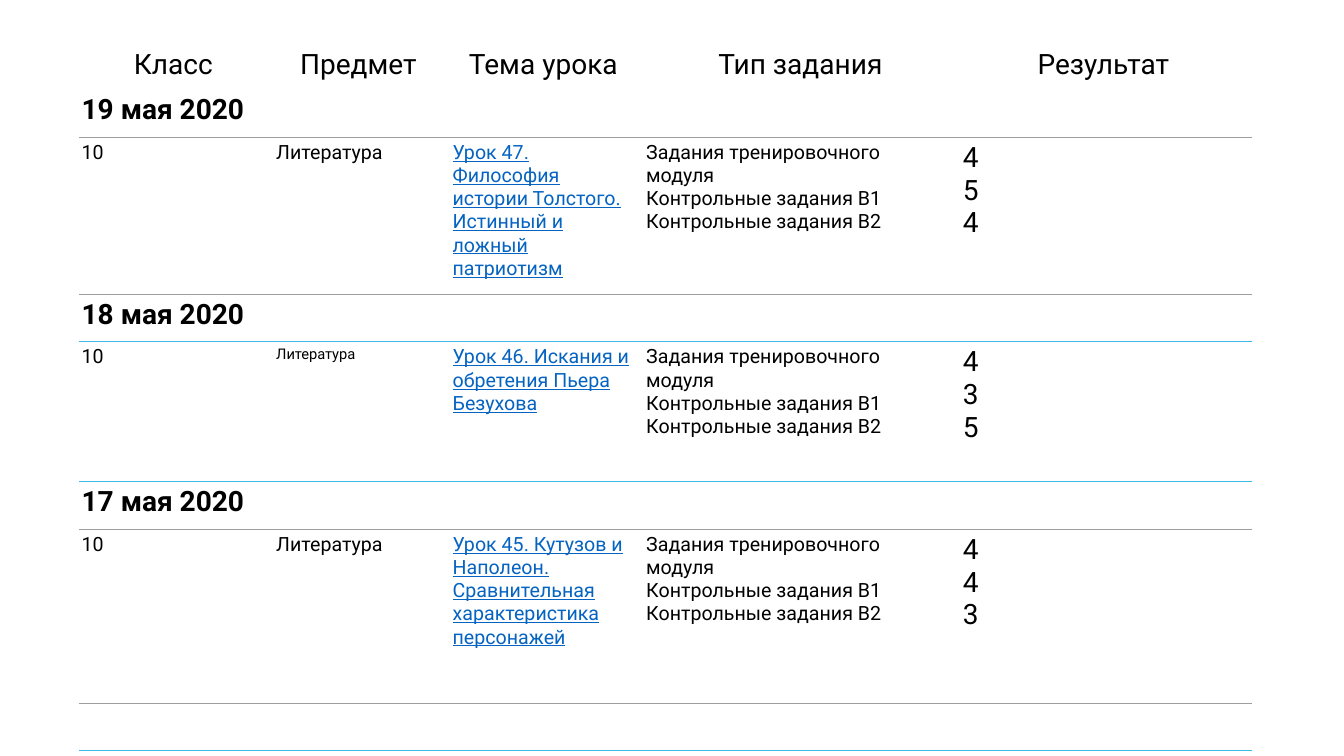
"""Build a one-slide lesson journal table with three dated entries."""
from lxml import etree
from pptx import Presentation
from pptx.dml.color import RGBColor
from pptx.enum.text import MSO_ANCHOR, PP_ALIGN
from pptx.oxml.ns import qn
from pptx.util import Inches, Pt

CENTER, LEFT = PP_ALIGN.CENTER, PP_ALIGN.LEFT
MIDDLE, TOP = MSO_ANCHOR.MIDDLE, MSO_ANCHOR.TOP
BLACK = RGBColor(0x00, 0x00, 0x00)
WHITE = RGBColor(0xFF, 0xFF, 0xFF)
LINK = RGBColor(0x05, 0x63, 0xC1)
BLUE = RGBColor(0x3F, 0xB9, 0xE6)
GREY = RGBColor(0x9C, 0x9F, 0xA1)

COLUMN_WIDTHS = [1.92, 1.75, 1.92, 3.14, 2.91]
DATE_HEIGHT = 0.47
ROW_HEIGHTS = [0.49, DATE_HEIGHT, 1.56, DATE_HEIGHT, 1.39, DATE_HEIGHT, 1.73, DATE_HEIGHT]
RULES = [None, GREY, GREY, BLUE, BLUE, GREY, GREY, BLUE]
HEADERS = ["Класс", "Предмет", "Тема урока", "Тип задания", "Результат"]
TASKS = "Задания тренировочного модуля\nКонтрольные задания В1\nКонтрольные задания В2"
LESSONS = [
    ("19 мая 2020", 14, "Урок 47. Философия истории Толстого. Истинный и ложный патриотизм", "4\n5\n4"),
    ("18 мая 2020", 10.5, "Урок 46. Искания и обретения Пьера Безухова", "4\n3\n5"),
    ("17 мая 2020", 14, "Урок 45. Кутузов и Наполеон. Сравнительная характеристика персонажей", "4\n4\n3"),
]


def write(cell, text, size, color=BLACK, bold=False, underline=False, align=LEFT):
    cell.text_frame.text = text
    for para in cell.text_frame.paragraphs:
        para.alignment = align
        for span in para.runs:
            span.font.name = "Roboto"
            span.font.size = Pt(size)
            span.font.color.rgb = color
            span.font.bold = bold
            span.font.underline = underline


def set_borders(cell, above, below):
    properties = cell._tc.get_or_add_tcPr()
    sides = [("a:lnL", None), ("a:lnR", None), ("a:lnT", above), ("a:lnB", below)]
    for position, (tag, color) in enumerate(sides):
        line = etree.Element(qn(tag), w=str(Pt(0.75)))
        if color is None:
            etree.SubElement(line, qn("a:noFill"))
        else:
            fill = etree.SubElement(line, qn("a:solidFill"))
            etree.SubElement(fill, qn("a:srgbClr"), val=str(color))
        properties.insert(position, line)


deck = Presentation()
deck.slide_width, deck.slide_height = Inches(13.33), Inches(7.5)
page = deck.slides.add_slide(deck.slide_layouts[6])
frame = page.shapes.add_table(
    len(ROW_HEIGHTS), len(COLUMN_WIDTHS), Inches(0.78), Inches(0.4),
    Inches(sum(COLUMN_WIDTHS)), Inches(sum(ROW_HEIGHTS)))
journal = frame.table
journal.first_row = journal.horz_banding = False
for column, width in zip(journal.columns, COLUMN_WIDTHS):
    column.width = Inches(width)

for index, row in enumerate(journal.rows):
    row.height = Inches(ROW_HEIGHTS[index])
    above = RULES[index - 1] if index else None
    for number, cell in enumerate(row.cells):
        cell.fill.solid()
        cell.fill.fore_color.rgb = WHITE
        cell.vertical_anchor = TOP if index else MIDDLE
        cell.margin_left = Inches(0.03 if index and number == 0 else 0.04)
        cell.margin_right = Inches(0.08)
        cell.margin_top = Inches(0.04 if index else 0.06)
        cell.margin_bottom = Inches(0.1 if index else 0.06)
        set_borders(cell, above, RULES[index])
    if index % 2:
        row.cells[0].merge(row.cells[len(COLUMN_WIDTHS) - 1])

for number, header in enumerate(HEADERS):
    write(journal.cell(0, number), header, 20, align=CENTER)
task_header = journal.cell(0, 3)
task_header.margin_right = task_header.margin_top = task_header.margin_bottom = Inches(0.04)

for order, (date, subject_size, topic, marks) in enumerate(LESSONS):
    date_row = 1 + 2 * order
    lesson_row = date_row + 1
    write(journal.cell(date_row, 0), date, 20, bold=True)
    write(journal.cell(lesson_row, 0), "10", 14)
    write(journal.cell(lesson_row, 1), "Литература", subject_size)
    write(journal.cell(lesson_row, 2), topic, 14, color=LINK, underline=True)
    write(journal.cell(lesson_row, 3), TASKS, 14)
    write(journal.cell(lesson_row, 4), marks, 20)

deck.save("out.pptx")
